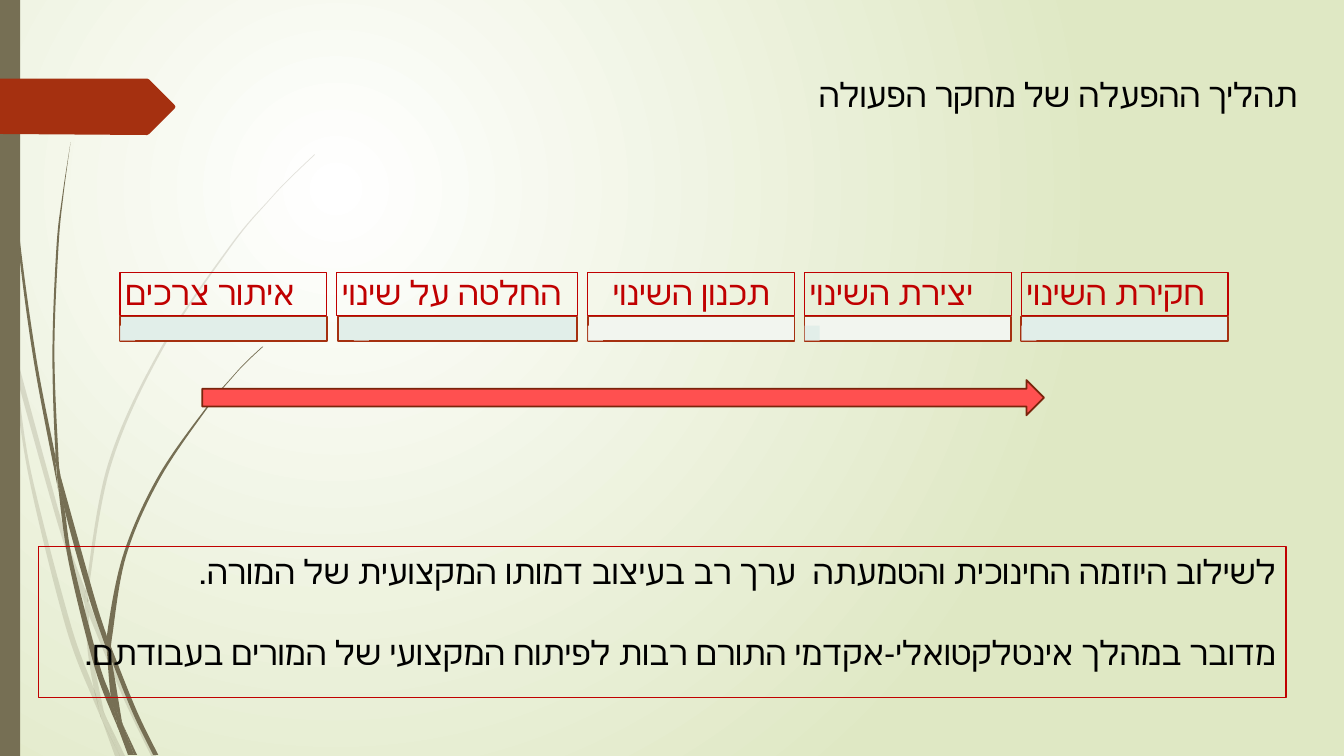
from dataclasses import dataclass
from typing import Optional

from lxml.etree import SubElement as Sub
from pptx import Presentation
from pptx.dml.color import RGBColor as Rgb
from pptx.enum.shapes import MSO_SHAPE as Kind
from pptx.enum.text import MSO_ANCHOR as Anchor, MSO_AUTO_SIZE as Fit, PP_ALIGN as Align
from pptx.oxml.ns import qn
from pptx.util import Emu, Inches, Pt

# Grid: hundredths of an inch
COLS, ROWS = 1333, 750
CELL = Inches(0.01)
FONT, SIZE = "Quicksand", 24
RED, RUST, DARK, BROWN, BLACK = "C00000", "A53010", "7A240C", "766F54", "000000"
MINT, MIST = "E1EEE9", "F2F5EF"

Point = tuple[float, float]
Side = tuple[Point, ...]


@dataclass
class Wisp:
    """A blade of grass: one edge there, the other edge back."""
    go: Side
    back: Side


@dataclass
class Step:
    text: str
    fill: str
    chip: str
    width: int = 205
    shift: int = 0
    trim: int = 0
    mid: bool = False


PALE = [
    Wisp(((11, 350), (9, 322), (0, 282)), ((0, 299), (10, 344))),
    Wisp(((17, 376), (58, 522), (84, 599)), ((85, 586), (62, 520), (14, 345))),
    Wisp(((88, 596), (92, 607), (127, 692), (155, 750)), ((150, 750), (123, 694), (88, 610))),
    Wisp(((105, 711), (124, 750)), ((119, 750),)),
    Wisp(((11, 350), (17, 376), (31, 469), (70, 619), (93, 683), (99, 707), (101, 714)),
         ((92, 693), (65, 621), (28, 470), (11, 350))),
    Wisp(((84, 599), (87, 646), (93, 683), (96, 692), (105, 711)),
         ((103, 706), (91, 646), (88, 610), (88, 608))),
    Wisp(((88, 596), (88, 584), (110, 462), (160, 349), (229, 245), (268, 198), (290, 175), (312, 154)),
         ((312, 153), (289, 175), (268, 197), (228, 244), (158, 348), (107, 461), (85, 584), (85, 586))),
    Wisp(((101, 714), (114, 750)), ((119, 750),)),
    Wisp(((88, 608), (88, 596)), ((85, 586), (84, 599))),
    Wisp(((93, 683), (99, 707), (101, 714), (119, 750)), ((105, 711), (96, 692))),
]
DEEP = [
    Wisp(((3, 0), (4, 48), (7, 110), (17, 233), (33, 355), (56, 477), (57, 481)),
         ((55, 457), (55, 453), (36, 355), (19, 232), (8, 109), (5, 48), (4, 0))),
    Wisp(((60, 472), (64, 505), (88, 592), (106, 645)), ((106, 633), (106, 631), (93, 590), (60, 472))),
    Wisp(((110, 641), (113, 649), (136, 706), (157, 749)), ((152, 749), (132, 708), (111, 656))),
    Wisp(((57, 477), (64, 505), (72, 556), (98, 657), (110, 691), (116, 717), (117, 722)),
         ((111, 708), (93, 659), (68, 557), (57, 477))),
    Wisp(((60, 472), (58, 453), (54, 349), (58, 245), (63, 193), (70, 141)),
         ((70, 141), (62, 193), (56, 245), (52, 349), (55, 449), (60, 472))),
    Wisp(((122, 719), (136, 749)), ((133, 749),)),
    Wisp(((55, 449), (60, 472), (64, 505)), ((57, 477), (55, 453))),
    Wisp(((111, 633), (125, 552), (158, 476), (205, 406), (231, 374), (245, 359), (261, 344)),
         ((260, 344), (245, 358), (231, 373), (204, 405), (156, 474), (122, 551), (106, 631), (110, 641))),
    Wisp(((117, 722), (127, 749)), ((131, 749),)),
    Wisp(((106, 645), (110, 691), (116, 706), (122, 719)), ((121, 716), (111, 656), (109, 651))),
    Wisp(((106, 645), (109, 651), (111, 656)), ((110, 641), (106, 631), (106, 633))),
    Wisp(((110, 691), (116, 717), (117, 722), (130, 749)), ((133, 749), (122, 719), (116, 706))),
]
TAG: Side = ((0, 78), (146, 78), (148, 79), (173, 104), (174, 106),
             (173, 108), (148, 133), (146, 134), (0, 133))

STEPS = [
    Step("איתור צרכים", MINT, MINT),
    Step("החלטה על שינוי", MINT, MINT, width=239, shift=17, trim=1),
    Step("תכנון השינוי", MIST, MIST, mid=True),
    Step("יצירת השינוי", MIST, MINT),
    Step("חקירת השינוי", MINT, MINT),
]
CLAIMS = [
    "לשילוב היוזמה החינוכית והטמעתה  ערך רב בעיצוב דמותו המקצועית של המורה.",
    "מדובר במהלך אינטלקטואלי-אקדמי התורם רבות לפיתוח המקצועי של המורים בעבודתם.",
]


def color(code: str) -> Rgb:
    return Rgb.from_string(code)


def cells(*counts: float) -> list[Emu]:
    return [Emu(round(n * CELL)) for n in counts]


def paint(shape, fill: Optional[str], line: Optional[str] = None,
          width: float = 0.75, alpha: int = 100) -> None:
    if fill:
        shape.fill.solid()
        shape.fill.fore_color.rgb = color(fill)
        if alpha < 100:
            tone = shape.element.spPr.find(qn("a:solidFill"))[0]
            Sub(tone, qn("a:alpha"), val=str(alpha * 1000))
    else:
        shape.fill.background()
    if line:
        shape.line.color.rgb = color(line)
        shape.line.width = Pt(width)
    else:
        shape.line.fill.background()


def block(shapes, kind: Kind, at: tuple, *look, **more):
    shape = shapes.add_shape(kind, *cells(*at))
    shape.shadow.inherit = False
    paint(shape, *look, **more)
    return shape


def write(para, text: str, tint: str) -> None:
    run = para.add_run()
    run.text = text
    font = run.font
    font.name, font.size, font.color.rgb = FONT, Pt(SIZE), color(tint)


def flow(para, align: Align) -> None:
    para.alignment = align
    para._p.get_or_add_pPr().set("rtl", "1")


def trace(shapes, points: Side, fill: str, alpha: int = 100):
    spots = [cells(*p) for p in points]
    pen = shapes.build_freeform(*spots[0], scale=1.0)
    pen.add_line_segments(spots[1:], close=True)
    shape = pen.convert_to_shape()
    shape.shadow.inherit = False
    paint(shape, fill, alpha=alpha)
    return shape


def bend(shape, side: Side, first: int) -> None:
    """Turn the straight pieces of one edge into smooth curves."""
    lines = list(shape.element.iter(qn("a:lnTo"), qn("a:cubicBezTo")))[first:]
    ends = (side[0], *side, side[-1])
    for line, a, b, c, d in zip(lines, ends, ends[1:], ends[2:], ends[3:]):
        line.tag = qn("a:cubicBezTo")
        pulls = [(q + (r - p) / 6, r - (s - q) / 6) for p, q, r, s in zip(a, b, c, d)]
        for n, (x, y) in enumerate(zip(*pulls)):
            x, y = cells(x, y)
            knob = Sub(line, qn("a:pt"), x=str(x - shape.left), y=str(y - shape.top))
            line.insert(n, knob)


def glow(slide) -> None:
    fill = slide.background.fill
    fill.gradient()
    for stop, code in zip(fill.gradient_stops, ("FFFFFF", "DFE8C4")):
        stop.color.rgb = color(code)
    grad = slide.element.find(".//" + qn("a:gradFill"))
    grad.remove(grad.find(qn("a:lin")))
    ring = Sub(grad, qn("a:path"), {"path": "circle"})
    Sub(ring, qn("a:fillToRect"), l="50000", t="50000", r="100000", b="100000")


def stage(shapes, step: Step, left: int) -> None:
    bar = (left + step.trim, 314, step.width - 2 * step.trim, 24)
    block(shapes, Kind.RECTANGLE, bar, step.fill, RUST, 1.25)
    block(shapes, Kind.RECTANGLE, (left + step.shift, 323, 15, 15), step.chip, alpha=90)
    label = block(shapes, Kind.RECTANGLE, (left, 270.5, step.width, 43), None, RED)
    frame = label.text_frame
    frame.word_wrap, frame.vertical_anchor = True, Anchor.MIDDLE
    frame.margin_left, frame.margin_top, frame.margin_right, frame.margin_bottom = cells(5, 3, 5, 3)
    para = frame.paragraphs[0]
    para.line_spacing = 0.9
    if step.mid:
        flow(para, Align.CENTER)
    else:
        para.alignment = Align.LEFT
    write(para, step.text, RED)


def main() -> None:
    deck = Presentation()
    deck.slide_width, deck.slide_height = cells(COLS, ROWS)
    slide = deck.slides.add_slide(deck.slide_layouts[5])
    shapes = slide.shapes

    # Backdrop: glow, grass, side strip and tag
    glow(slide)
    for wisps, alpha in ((PALE, 20), (DEEP, 100)):
        tuft = shapes.add_group_shape().shapes
        for wisp in wisps:
            blade = trace(tuft, wisp.go + wisp.back, BROWN, alpha)
            bend(blade, wisp.go, 0)
            bend(blade, wisp.back, len(wisp.go))
    block(shapes, Kind.RECTANGLE, (0, 0, 20, ROWS), BROWN)
    trace(shapes, TAG, RUST)

    # Framed claims in the title
    title = shapes.title
    shapes._spTree.append(title.element)
    title.left, title.top, title.width, title.height = cells(38, 542, 1237.5, 150)
    paint(title, None, RED)
    frame = title.text_frame
    frame.word_wrap, frame.auto_size, frame.vertical_anchor = True, Fit.NONE, Anchor.TOP
    for n, claim in enumerate(CLAIMS):
        para = frame.add_paragraph() if n else frame.paragraphs[0]
        flow(para, Align.RIGHT)
        para.space_before = Pt(29 * n)
        write(para, claim, BLACK)

    # Row of steps
    row, left = shapes.add_group_shape().shapes, 119
    for step in STEPS:
        stage(row, step, left)
        left += step.width + 10

    # Arrow and heading
    block(shapes, Kind.RIGHT_ARROW, (200.5, 377, 835, 35), "FF5050", DARK, 1.25)
    head = shapes.add_textbox(*cells(802, 68, 512, 50)).text_frame
    head.word_wrap, head.auto_size = True, Fit.SHAPE_TO_FIT_TEXT
    write(head.paragraphs[0], "תהליך ההפעלה של מחקר הפעולה", BLACK)

    deck.save("out.pptx")


if __name__ == "__main__":
    main()
